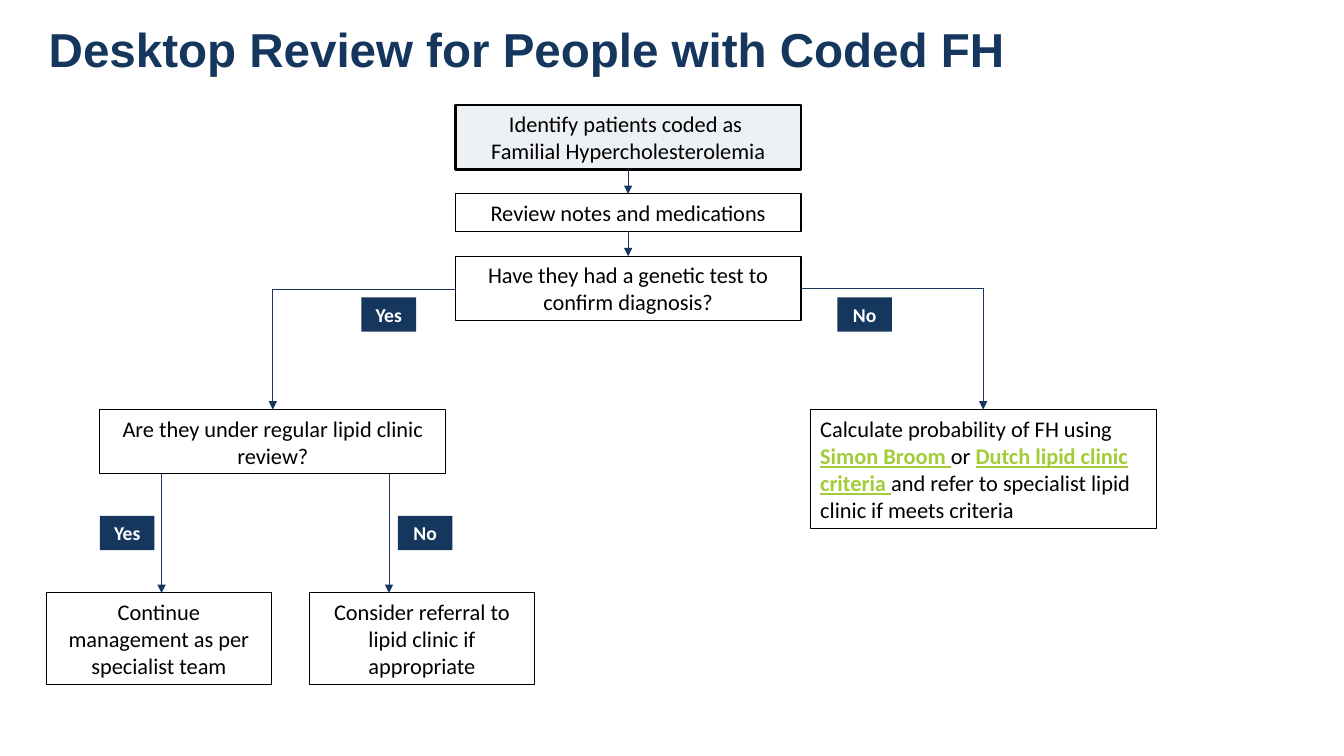
from collections import namedtuple

from lxml import etree
from pptx import Presentation
from pptx.dml.color import RGBColor
from pptx.enum.shapes import MSO_CONNECTOR, MSO_SHAPE
from pptx.enum.text import MSO_ANCHOR, PP_ALIGN
from pptx.oxml.ns import qn
from pptx.util import Pt

RECTANGLE = MSO_SHAPE.RECTANGLE
STRAIGHT, ELBOW = MSO_CONNECTOR.STRAIGHT, MSO_CONNECTOR.ELBOW
MIDDLE = MSO_ANCHOR.MIDDLE
LEFT, CENTER = PP_ALIGN.LEFT, PP_ALIGN.CENTER

COLORS = {
    "navy": "15375E",
    "arrow": "15375D",
    "pale": "D6DCE5",
    "green": "A3CD38",
    "black": "000000",
    "white": "FFFFFF",
}
TAG_WIDTH, TAG_HEIGHT = 39, 24.5
OUTCOME_WIDTH, OUTCOME_HEIGHT = 160.6, 65.5

Box = namedtuple("Box", "left top width height")


def color(name):
    return RGBColor.from_string(COLORS[name])


def center(box):
    return box.left + box.width / 2


def bottom(box):
    return box.top + box.height


def style(span, size, tint, bold=False, name="Calibri"):
    span.font.name = name
    span.font.size = Pt(size)
    span.font.bold = bold
    span.font.color.rgb = color(tint)


def add_rectangle(page, box):
    shape = page.shapes.add_shape(RECTANGLE, *map(Pt, box))
    shape.shadow.inherit = False
    shape.text_frame.word_wrap = True
    shape.text_frame.vertical_anchor = MIDDLE
    return shape


def add_step(page, box, lines, align=CENTER, line_width=0.75):
    shape = add_rectangle(page, box)
    shape.fill.background()
    shape.line.color.rgb = color("black")
    shape.line.width = Pt(line_width)
    shape.text_frame.text = lines
    for para in shape.text_frame.paragraphs:
        para.alignment = align
        for span in para.runs:
            style(span, 16, "black")
    return shape


def add_tag(page, left, top, answer):
    shape = add_rectangle(page, Box(left, top, TAG_WIDTH, TAG_HEIGHT))
    shape.fill.solid()
    shape.fill.fore_color.rgb = color("navy")
    shape.line.fill.background()
    shape.text_frame.word_wrap = False
    shape.text_frame.text = answer
    para = shape.text_frame.paragraphs[0]
    para.alignment = CENTER
    style(para.runs[0], 14, "white", bold=True)


def add_arrow(page, start, end, kind=STRAIGHT):
    arrow = page.shapes.add_connector(kind, *map(Pt, start + end))
    arrow.line.color.rgb = color("arrow")
    arrow.line.width = Pt(0.5)
    properties = arrow._element.spPr
    if kind == ELBOW:
        properties.find(qn("a:prstGeom")).set("prst", "bentConnector2")
    etree.SubElement(properties.find(qn("a:ln")), qn("a:tailEnd"), type="triangle")
    etree.SubElement(properties, qn("a:effectLst"))


def add_title(page, box):
    title = page.shapes.title
    title.left, title.top, title.width, title.height = map(Pt, box)
    frame = title.text_frame
    frame.margin_left = frame.margin_top = frame.margin_right = frame.margin_bottom = 0
    frame.vertical_anchor = MIDDLE
    frame.text = "Desktop Review for People with Coded FH"
    para = frame.paragraphs[0]
    para.alignment = LEFT
    para.line_spacing = 0.9
    style(para.runs[0], 34, "navy", bold=True, name="Arial")


def add_trunk(page, box):
    identify = Box(box.left, box.top, box.width, 46)
    review = Box(box.left, box.top + 63.5, box.width, 26.8)
    question = Box(box.left, bottom(box) - 46, box.width, 46)
    start = add_step(
        page, identify,
        "Identify patients coded as \nFamilial Hypercholesterolemia",
        line_width=2,
    )
    start.fill.solid()
    start.fill.fore_color.rgb = color("pale")
    tint = start._element.spPr.find(qn("a:solidFill"))[0]
    etree.SubElement(tint, qn("a:alpha"), val="40000")
    add_step(page, review, "Review notes and medications")
    add_step(page, question, "Have they had a genetic test to confirm diagnosis?")
    for upper, lower in ((identify, review), (review, question)):
        add_arrow(page, (center(box), bottom(upper)), (center(box), lower.top))
    return question


def add_clinic_branch(page, box, question):
    add_step(page, box, "Are they under regular lipid clinic review?")
    add_arrow(page, (question.left, question.top + 23.5), (center(box), box.top), ELBOW)
    add_tag(page, question.left - 28 - TAG_WIDTH, question.top + 29.5, "Yes")

    outcome_top = bottom(box) + 85
    outcomes = (
        ("Yes", 44, 0, -38.2, "Continue management as per specialist team"),
        ("No", 206.5, 212.8, 149.7, "Consider referral to lipid clinic if appropriate"),
    )
    for answer, arrow_shift, tag_shift, outcome_shift, outcome in outcomes:
        arrow_left = box.left + arrow_shift
        add_step(
            page,
            Box(box.left + outcome_shift, outcome_top, OUTCOME_WIDTH, OUTCOME_HEIGHT),
            outcome,
        )
        add_arrow(page, (arrow_left, bottom(box)), (arrow_left, outcome_top))
        add_tag(page, box.left + tag_shift, bottom(box) + 30, answer)


def add_criteria_branch(page, box, question):
    shape = add_step(page, box, "", align=LEFT)
    shape.fill.solid()
    shape.fill.fore_color.rgb = color("white")
    para = shape.text_frame.paragraphs[0]
    parts = (
        ("Calculate probability of FH using ", False),
        ("Simon Broom ", True),
        ("or ", False),
        ("Dutch lipid clinic criteria ", True),
        ("and refer to specialist lipid clinic if meets criteria", False),
    )
    for words, emphasis in parts:
        span = para.add_run()
        span.text = words
        style(span, 16, "green" if emphasis else "black", bold=emphasis)
        span.font.underline = emphasis
    question_right = question.left + question.width
    add_arrow(page, (question_right, question.top + 23), (center(box), box.top), ELBOW)
    add_tag(page, question_right + 26, question.top + 29.5, "No")


def main():
    deck = Presentation()
    deck.slide_width, deck.slide_height = Pt(960), Pt(540)
    page = deck.slides.add_slide(deck.slide_layouts[5])
    add_title(page, Box(34.8, 19.5, 890, 34.8))
    question = add_trunk(page, Box(325.2, 75, 247, 154))
    add_clinic_branch(page, Box(71.4, 292.5, 247, 46), question)
    add_criteria_branch(page, Box(578.8, 292.5, 247, 85), question)
    deck.save("out.pptx")


if __name__ == "__main__":
    main()
